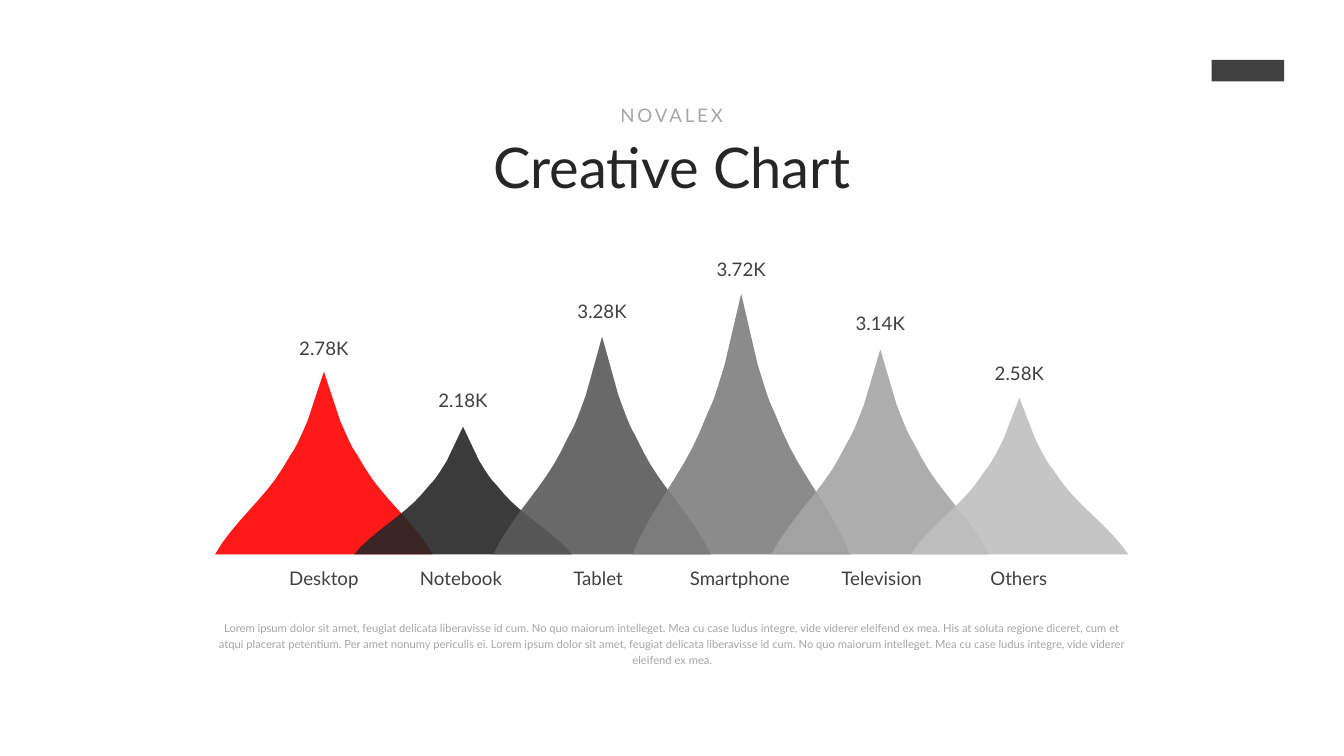
import pptx
import pptx.dml.color
import pptx.enum.shapes
import pptx.enum.text
import pptx.oxml.ns
import pptx.util
import lxml.etree

Inches = pptx.util.Inches
Pt = pptx.util.Pt
RGBColor = pptx.dml.color.RGBColor

RED = RGBColor(0xFF, 0x00, 0x00)
INK = RGBColor(0x26, 0x26, 0x26)
DARK = RGBColor(0x40, 0x40, 0x40)
STONE = RGBColor(0x59, 0x59, 0x59)
GRAY = RGBColor(0x7F, 0x7F, 0x7F)
SILVER = RGBColor(0xA5, 0xA5, 0xA5)
MUTED = RGBColor(0xA6, 0xA6, 0xA6)
PALE = RGBColor(0xBF, 0xBF, 0xBF)

# name, value, peak height, value label top, colour, name width
DATA = [
    ("Desktop", "2.78K", 2.72, 4.97, RED, 1.84),
    ("Notebook", "2.18K", 1.9, 5.74, INK, 1.84),
    ("Tablet", "3.28K", 3.24, 4.42, STONE, 1.84),
    ("Smartphone", "3.72K", 3.88, 3.79, GRAY, 1.98),
    ("Television", "3.14K", 3.05, 4.59, SILVER, 1.84),
    ("Others", "2.58K", 2.33, 5.33, PALE, 1.84),
]

CURVES = [
    [(0.15, 0.27), (0.21, 0.35), (0.25, 0.41), (0.3, 0.45)],
    [(0.3, 0.45), (0.34, 0.49), (0.28, 0.43), (0.38, 0.53)],
    [(0.38, 0.53), (0.54, 0.69), (0.84, 0.83), (1, 1)],
]

LOREM = (
    "Lorem ipsum dolor sit amet, feugiat delicata liberavisse id cum. "
    "No quo maiorum intelleget. Mea cu case ludus integre, vide viderer "
    "eleifend ex mea. "
)
BODY = LOREM + "His at soluta regione diceret, cum et atqui placerat petentium. Per amet nonumy periculis ei. " + LOREM.strip()


def write(para, text, size=20, color=DARK, before=0, line=None, track=0):
    para.alignment = pptx.enum.text.PP_ALIGN.CENTER
    para.space_before = Pt(before)
    if line:
        para.line_spacing = line
    run = para.add_run()
    run.text = text
    run.font.name = "Lato"
    run.font.size = Pt(size)
    run.font.color.rgb = color
    if track:
        run._r.get_or_add_rPr().set("spc", str(track * 100))


def frame(slide, left, top, width, height):
    box = slide.shapes.add_textbox(Inches(left), Inches(top), Inches(width), Inches(height))
    text = box.text_frame
    text.word_wrap = True
    text.auto_size = pptx.enum.text.MSO_AUTO_SIZE.SHAPE_TO_FIT_TEXT
    return text


def paint(shape, color, alpha=100):
    shape.shadow.inherit = False
    shape.fill.solid()
    shape.fill.fore_color.rgb = color
    shape.line.fill.background()
    if alpha < 100:
        qn = pptx.oxml.ns.qn
        tint = shape._element.spPr.find(qn("a:solidFill")).find(qn("a:srgbClr"))
        lxml.etree.SubElement(tint, qn("a:alpha")).set("val", str(alpha * 1000))


def bezier(nodes, step):
    weights = ((1 - step) ** 3, 3 * step * (1 - step) ** 2, 3 * step**2 * (1 - step), step**3)
    return tuple(sum(w * node[axis] for w, node in zip(weights, nodes)) for axis in (0, 1))


def peak(slide, left, top, width, height, color):
    half = width / 2
    side = [CURVES[0][0]]
    side += [bezier(nodes, i / 8) for nodes in CURVES for i in range(1, 9)]
    outline = side + [(-x, y) for x, y in reversed(side)]
    points = [(Inches(left + half * (1 + x)), Inches(top + height * y)) for x, y in outline]
    form = slide.shapes.build_freeform(Inches(left + half), Inches(top))
    form.add_line_segments(points, close=True)
    paint(form.convert_to_shape(), color, 90)


def chart(slide, left, base, width, step):
    for i, (name, value, height, top, color, span) in enumerate(DATA):
        peak(slide, left + i * step, base - height, width, height, color)
    edge = left + 0.7
    for i, (name, value, height, top, color, span) in enumerate(DATA):
        write(frame(slide, edge, base + 0.13, span, 0.44).paragraphs[0], name)
        edge += span + 0.2
        mid = left + i * step + width / 2
        write(frame(slide, mid - 1, top, 2, 0.44).paragraphs[0], value)


def title(slide, left, top, width, height):
    text = frame(slide, left, top, width, height)
    write(text.paragraphs[0], "NOVALEX", color=MUTED, before=12, track=3)
    write(text.add_paragraph(), "Creative Chart", size=60, color=INK, before=6)


def note(slide, left, top, width, height):
    text = frame(slide, left, top, width, height)
    write(text.paragraphs[0], BODY, size=12, color=MUTED, before=12, line=1.2)


def badge(slide, left, top, width, height):
    kind = pptx.enum.shapes.MSO_SHAPE.RECTANGLE
    paint(slide.shapes.add_shape(kind, Inches(left), Inches(top), Inches(width), Inches(height)), DARK)


def main():
    deck = pptx.Presentation()
    deck.slide_width = Inches(20)
    deck.slide_height = Inches(11.25)
    slide = deck.slides.add_slide(deck.slide_layouts[6])
    badge(slide, 18.03, 0.89, 1.08, 0.32)
    chart(slide, 3.2, 8.25, 3.24, 2.07)
    note(slide, 3.15, 9.16, 13.71, 0.83)
    title(slide, 5.97, 1.5, 8.05, 1.53)
    deck.save("out.pptx")


if __name__ == "__main__":
    main()
